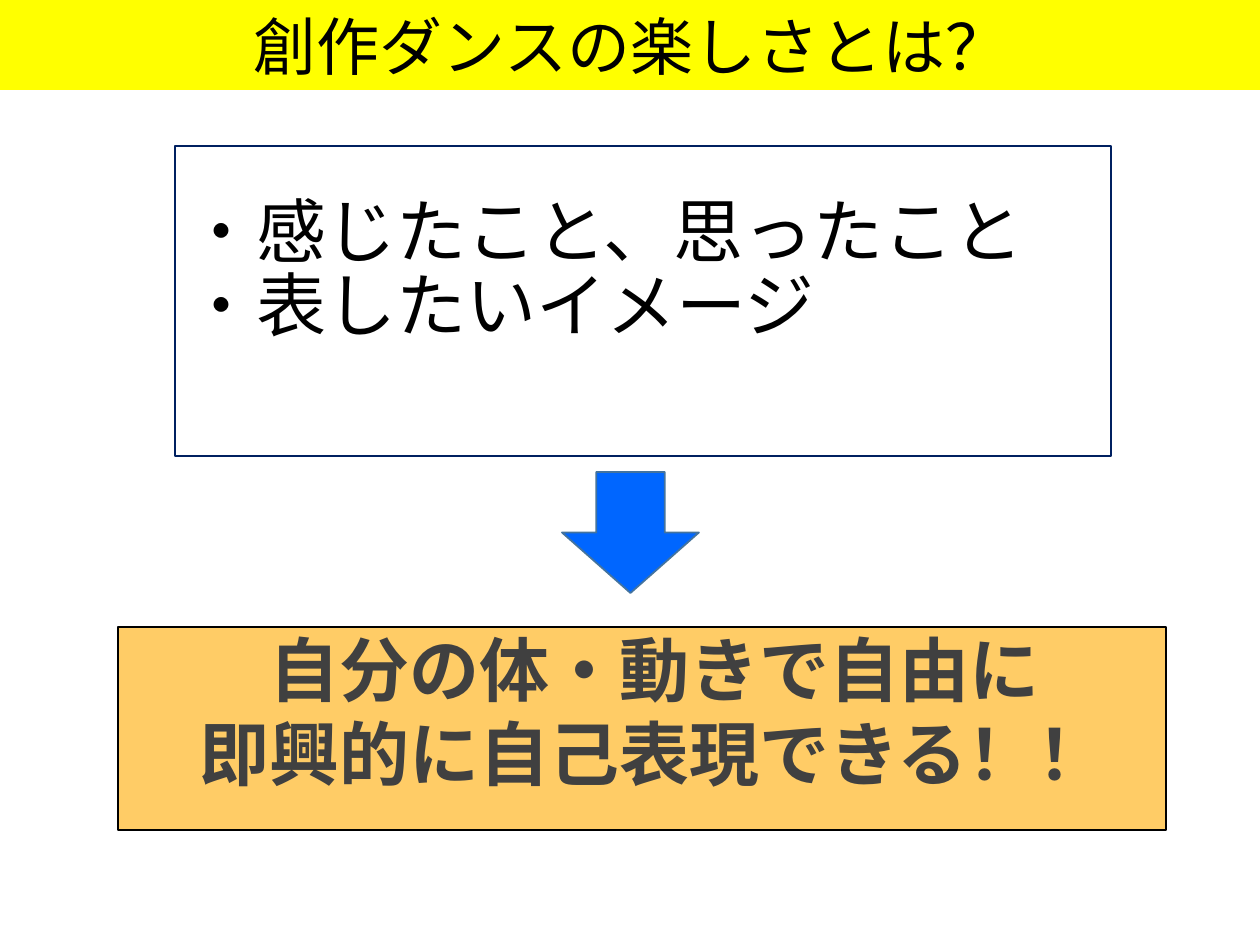
from lxml.etree import SubElement
from pptx import Presentation
from pptx.dml.color import RGBColor
from pptx.enum.shapes import MSO_SHAPE
from pptx.enum.text import MSO_ANCHOR, PP_ALIGN
from pptx.oxml.ns import qn
from pptx.util import Emu, Pt

PIXEL = 914400 // 126
FONT = "Noto Sans CJK JP"
BLACK = RGBColor(0x00, 0x00, 0x00)
GRAY = RGBColor(0x40, 0x40, 0x40)
NAVY = RGBColor(0x00, 0x20, 0x60)
BLUE = RGBColor(0x00, 0x66, 0xFF)
STEEL = RGBColor(0x43, 0x73, 0x9E)
ORANGE = RGBColor(0xFF, 0xCC, 0x66)
YELLOW = RGBColor(0xFF, 0xFF, 0x00)

TITLE = ["創作ダンスの楽しさとは？"]
IDEAS = ["・感じたこと、思ったこと", "・表したいイメージ"]
CONCLUSION = ["自分の体・動きで自由に", "即興的に自己表現できる！！"]
CONCLUSION_INDENTS = [2, 1]


def px(value):
    """Convert pixels to EMU."""
    return Emu(value * PIXEL)


def add_block(slide, kind, box, fill=None, line=None, width=1):
    """Add a flat preset shape with optional fill and outline."""
    shape = slide.shapes.add_shape(kind, *map(px, box))
    shape.shadow.inherit = False
    if fill is None:
        shape.fill.background()
    else:
        shape.fill.solid()
        shape.fill.fore_color.rgb = fill
    if line is None:
        shape.line.fill.background()
    else:
        shape.line.color.rgb = line
        shape.line.width = Pt(width)
    return shape


def write_lines(shape, lines, size, color, top=0, bold=False, align=PP_ALIGN.LEFT):
    """Fill a shape with one styled paragraph per line."""
    frame = shape.text_frame
    frame.word_wrap = True
    frame.vertical_anchor = MSO_ANCHOR.TOP
    frame.margin_left = frame.margin_right = px(12)
    frame.margin_top, frame.margin_bottom = px(top), 0
    frame.text = "\n".join(lines)
    for paragraph in frame.paragraphs:
        paragraph.alignment = align
        for run in paragraph.runs:
            font = run.font
            font.name, font.size, font.bold = FONT, Pt(size), bold
            font.color.rgb = color
            properties = run._r.get_or_add_rPr()
            SubElement(properties, qn("a:ea")).set("typeface", FONT)
    return frame


def main():
    """Build and save the slide."""
    presentation = Presentation()
    presentation.slide_width, presentation.slide_height = px(1260), px(945)
    slide = presentation.slides.add_slide(presentation.slide_layouts[6])

    ideas = add_block(slide, MSO_SHAPE.RECTANGLE, (175, 146, 936, 310), line=NAVY, width=0.75)
    for paragraph in write_lines(ideas, IDEAS, 40, BLACK, top=58).paragraphs:
        paragraph.line_spacing = 0.8
        paragraph.space_after = Pt(4)

    add_block(slide, MSO_SHAPE.DOWN_ARROW, (562, 472, 137, 121), BLUE, STEEL)

    conclusion = add_block(slide, MSO_SHAPE.RECTANGLE, (118, 627, 1048, 203), ORANGE, BLACK, 1.5)
    frame = write_lines(conclusion, CONCLUSION, 40, GRAY, bold=True)
    for paragraph, indent in zip(frame.paragraphs, CONCLUSION_INDENTS):
        paragraph._p.get_or_add_pPr().set("marL", str(Pt(40) * indent))

    title = add_block(slide, MSO_SHAPE.RECTANGLE, (0, 0, 1262, 90), YELLOW)
    frame = write_lines(title, TITLE, 36, BLACK, align=PP_ALIGN.CENTER)
    frame.vertical_anchor = MSO_ANCHOR.MIDDLE

    presentation.save("out.pptx")


if __name__ == "__main__":
    main()
